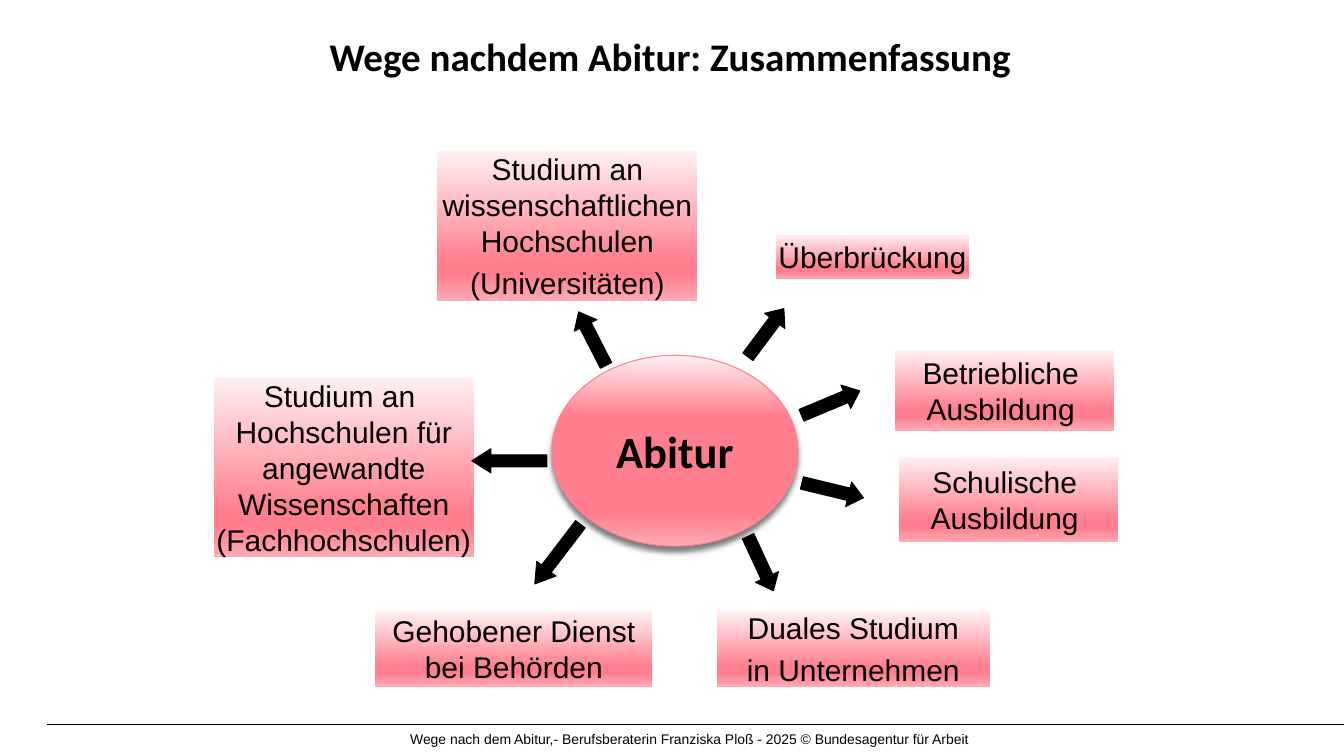
from dataclasses import dataclass
from lxml.etree import SubElement
from pptx import Presentation
from pptx.dml.color import RGBColor
from pptx.enum.shapes import MSO_CONNECTOR as Connector, MSO_SHAPE as Shape
from pptx.enum.text import MSO_ANCHOR as Anchor, PP_ALIGN as Align
from pptx.oxml.ns import qn
from pptx.util import Cm, Pt


@dataclass(frozen=True)
class Theme:
    ink: str = "000000"
    pale: str = "FFF1F2"
    rose: str = "FF7F8E"
    soft: str = "FFAAB4"
    body_font: str = "Arial"
    head_font: str = "Calibri"
    title_size: float = 28
    hub_size: float = 32
    path_size: float = 21.5
    footer_size: float = 10
    hairline: float = 0.5
    outline: float = 0.75


THEME = Theme()
WIDTH, HEIGHT = 34.01, 19.13
TITLE = "Wege nachdem Abitur: Zusammenfassung"
FOOTER = "Wege nach dem Abitur,- Berufsberaterin Franziska Ploß - 2025 © Bundesagentur für Arbeit"
HUB = ("Abitur", (13.97, 8.99, 6.22, 4.83))
PARAGRAPH_GAP = 4.3

PATHS = [
    (["Gehobener Dienst\nbei Behörden"], (9.5, 15.47, 7.01, 1.9), 0),
    (["Studium an\nwissenschaftlichen\nHochschulen", "(Universitäten)"],
     (11.07, 3.81, 6.58, 3.81), PARAGRAPH_GAP),
    (["Studium an ", "Hochschulen für\nangewandte\nWissenschaften\n(Fachhochschulen)"],
     (5.41, 9.55, 6.58, 4.55), 0),
    (["Betriebliche ", "Ausbildung "], (22.66, 8.86, 5.54, 2.03), 0),
    (["Duales Studium", "in Unternehmen"], (18.14, 15.47, 6.91, 1.9), PARAGRAPH_GAP),
    (["Überbrückung"], (19.63, 5.94, 4.9, 1.12), 0),
    (["Schulische ", "Ausbildung "], (22.76, 11.56, 5.54, 2.16), 0),
]

SHORT, MEDIUM, LONG = (1.52, 0.64, 0.6), (1.6, 0.64, 0.6), (1.9, 0.61, 0.79)
ARROWS = [
    (14.99, 8.57, 242.9, SHORT),
    (12.89, 11.66, 180, LONG),
    (19.25, 14.26, 65.1, SHORT),
    (19.38, 8.42, 306.8, SHORT),
    (21.02, 10.2, 337.3, MEDIUM),
    (14.11, 14.02, 127.4, LONG),
    (21.07, 12.41, 13.6, MEDIUM),
]


def color(value):
    return RGBColor.from_string(value)


def write(box, paragraphs, *, size, font=THEME.body_font, bold=False, align=Align.CENTER,
          anchor=Anchor.MIDDLE, wrap=False, margins=(0.25, 0.13), gap=0, after=0):
    frame = box.text_frame
    frame.word_wrap = wrap
    frame.vertical_anchor = anchor
    frame.margin_left = frame.margin_right = Cm(margins[0])
    frame.margin_top = frame.margin_bottom = Cm(margins[1])
    for index, text in enumerate(paragraphs):
        para = frame.add_paragraph() if index else frame.paragraphs[0]
        para.text = text
        para.alignment = align
        para.space_before = Pt(gap if index else 0)
        para.space_after = Pt(after)
        for span in para.runs:
            span.font.size = Pt(size)
            span.font.name = font
            span.font.bold = bold
            span.font.color.rgb = color(THEME.ink)


def add_shape(page, kind, area):
    shape = page.shapes.add_shape(kind, *map(Cm, area))
    shape.shadow.inherit = False
    return shape


def add_text(page, area, text, **style):
    write(page.shapes.add_textbox(*map(Cm, area)), [text], anchor=Anchor.TOP, wrap=True, **style)


def fill_rose(shape, rose_start):
    shape.fill.gradient()
    shape.fill.gradient_angle = 270
    stops = shape._element.spPr.find(qn("a:gradFill")).find(qn("a:gsLst"))
    for stop in list(stops):
        stops.remove(stop)
    for position, value in ((0, THEME.pale), (rose_start, THEME.rose),
                            (83, THEME.rose), (100, THEME.soft)):
        stop = SubElement(stops, qn("a:gs"), pos=str(position * 1000))
        SubElement(stop, qn("a:srgbClr"), val=value)


def add_shadow(shape):
    effects = shape._element.spPr.find(qn("a:effectLst"))
    shadow = SubElement(effects, qn("a:outerShdw"), blurRad=str(Pt(4)), dist=str(Pt(4)),
                        dir="5400000", rotWithShape="0")
    tint = SubElement(shadow, qn("a:srgbClr"), val=THEME.ink)
    SubElement(tint, qn("a:alpha"), val="51000")


def add_footer_line(page):
    line = page.shapes.add_connector(Connector.STRAIGHT, Cm(1.19), Cm(18.34), Cm(WIDTH), Cm(18.34))
    line.line.color.rgb = color(THEME.ink)
    line.line.width = Pt(THEME.hairline)
    SubElement(line._element.spPr, qn("a:effectLst"))


def add_path(page, paragraphs, area, gap):
    box = add_shape(page, Shape.RECTANGLE, area)
    fill_rose(box, 74)
    box.line.fill.background()
    write(box, paragraphs, size=THEME.path_size, gap=gap)


def add_hub(page, text, area):
    hub = add_shape(page, Shape.OVAL, area)
    fill_rose(hub, 32)
    hub.line.color.rgb = color(THEME.rose)
    hub.line.width = Pt(THEME.outline)
    add_shadow(hub)
    write(hub, [text], size=THEME.hub_size, font=THEME.head_font, bold=True)


def add_arrow(page, center_x, center_y, angle, form):
    length, thickness, head = form
    area = (center_x - length / 2, center_y - thickness / 2, length, thickness)
    arrow = add_shape(page, Shape.RIGHT_ARROW, area)
    arrow.adjustments[0] = 0.5
    arrow.adjustments[1] = head
    arrow.rotation = angle
    arrow.fill.solid()
    arrow.fill.fore_color.rgb = color(THEME.ink)
    arrow.line.color.rgb = color(THEME.ink)
    arrow.line.width = Pt(THEME.outline)


def main():
    deck = Presentation()
    deck.slide_width, deck.slide_height = Cm(WIDTH), Cm(HEIGHT)
    page = deck.slides.add_slide(deck.slide_layouts[6])
    add_footer_line(page)
    add_text(page, (2.59, 0.81, 28.73, 2.03), TITLE, size=THEME.title_size,
             font=THEME.head_font, bold=True, margins=(0, 0))
    add_text(page, (10.13, 18.36, 20.93, 0.71), FOOTER, size=THEME.footer_size,
             align=Align.LEFT, after=2)
    for path in PATHS:
        add_path(page, *path)
    add_hub(page, *HUB)
    for arrow in ARROWS:
        add_arrow(page, *arrow)
    deck.save("out.pptx")


if __name__ == "__main__":
    main()
